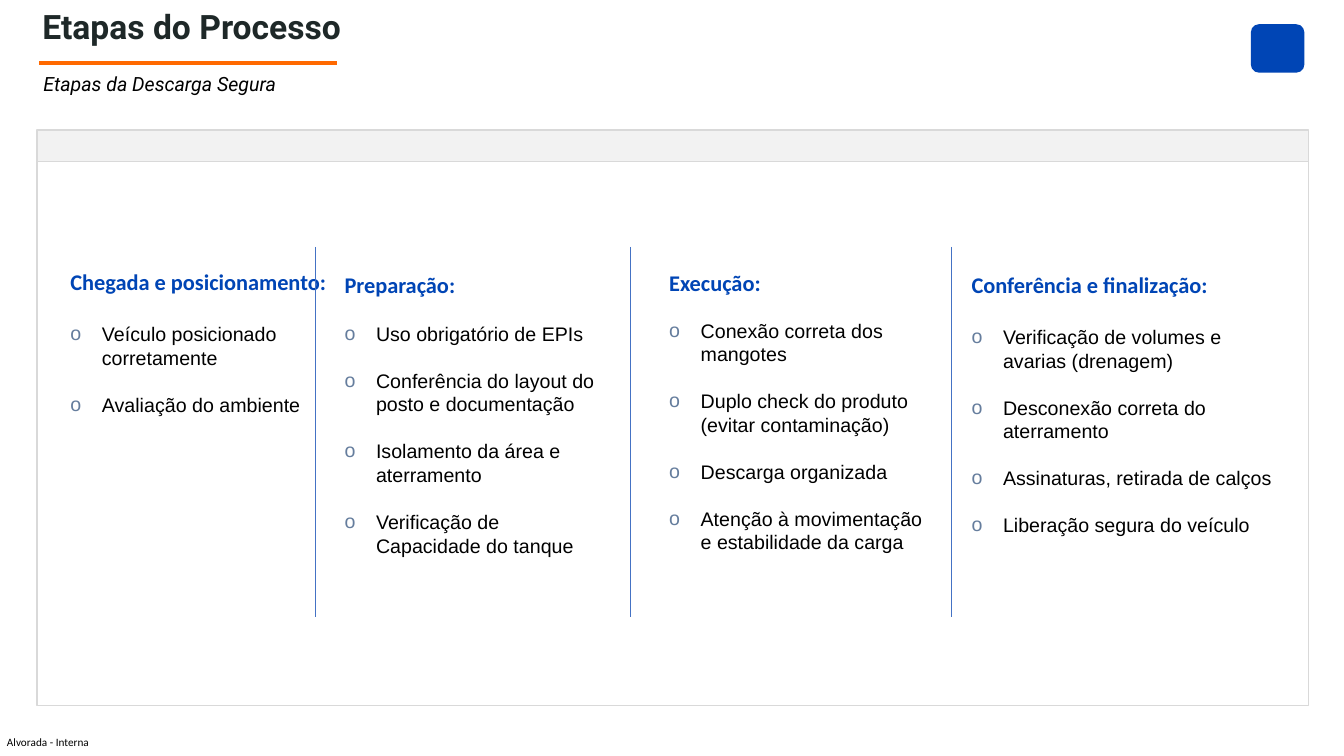
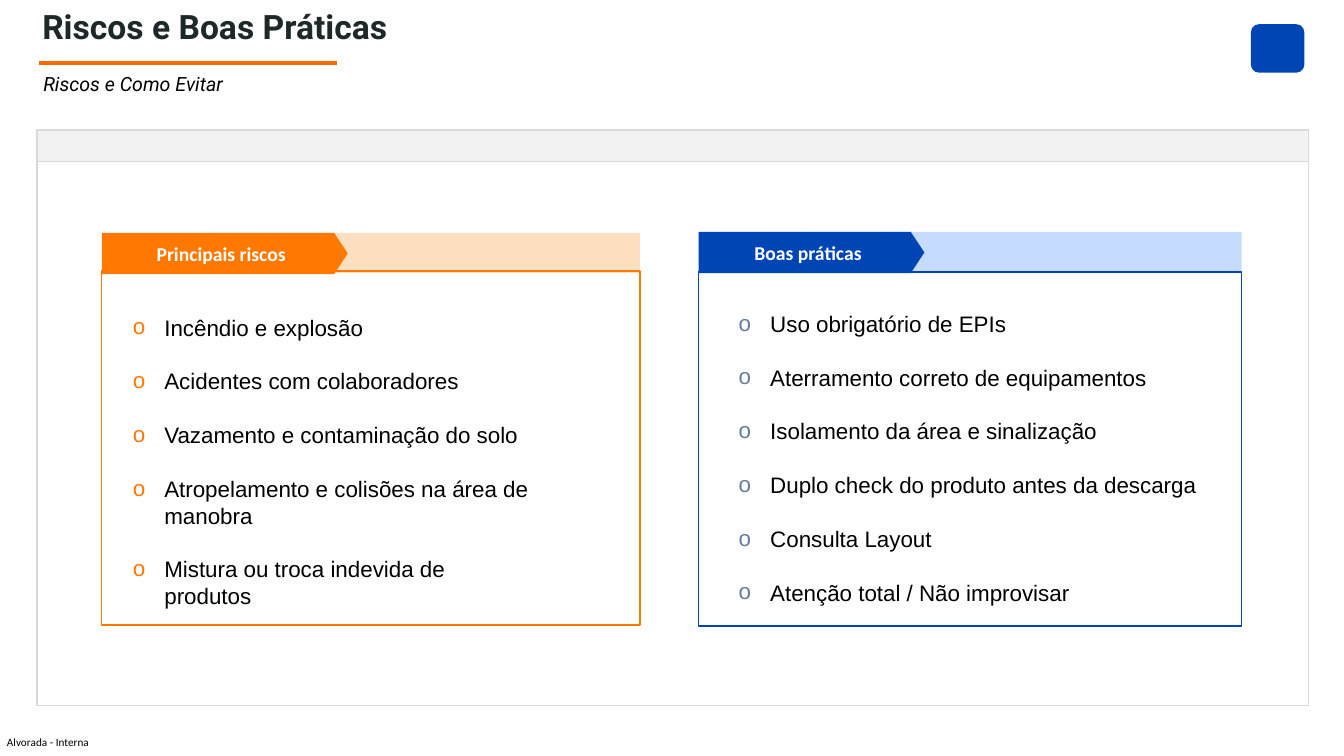
from dataclasses import dataclass

from lxml import etree
from pptx import Presentation
from pptx.dml.color import RGBColor
from pptx.enum.shapes import MSO_CONNECTOR as Connector, MSO_SHAPE as Preset
from pptx.enum.text import MSO_ANCHOR as Anchor, MSO_AUTO_SIZE as AutoSize, PP_ALIGN as Align
from pptx.oxml.ns import qn
from pptx.util import Pt


@dataclass(frozen=True)
class Theme:
    # Colours
    ink: str = "1E2828"
    black: str = "000000"
    white: str = "FFFFFF"
    blue: str = "0045B5"
    pale_blue: str = "C5DBFF"
    orange: str = "FF7800"
    pale_orange: str = "FFDFC1"
    rule: str = "FF6900"
    divider: str = "4472C4"
    bullet: str = "657D9D"
    band: str = "F2F2F2"
    border: str = "D9D9D9"
    # Fonts
    display: str = "Roboto"
    label: str = "Calibri"
    body: str = "Arial"
    # Type sizes
    title_size: float = 24
    large_size: float = 16
    text_size: float = 14
    footer_size: float = 8
    # List layout
    indent: float = 22.5
    line_factor: float = 1.2


THEME = Theme()
FOOTER = "Alvorada - Interna"

# Heading, left, top, width, gap under the heading, items
STAGES = [
    ("Chegada e posicionamento:", 43.2, 188, 203.5, 19.5,
     ["Veículo posicionado corretamente", "Avaliação do ambiente"]),
    ("Preparação:", 239, 190, 203.5, 17,
     ["Uso obrigatório de EPIs", "Conferência do layout do posto e documentação",
      "Isolamento da área e aterramento", "Verificação de Capacidade do tanque"]),
    ("Execução:", 470.9, 188.8, 203.5, 16,
     ["Conexão correta dos mangotes", "Duplo check do produto (evitar contaminação)",
      "Descarga organizada", "Atenção à movimentação e estabilidade da carga"]),
    ("Conferência e finalização:", 686.9, 190, 235.5, 19.5,
     ["Verificação de volumes e avarias (drenagem)", "Desconexão correta do aterramento",
      "Assinaturas, retirada de calços", "Liberação segura do veículo"]),
]
RISKS = ["Incêndio e explosão", "Acidentes com colaboradores",
         "Vazamento e contaminação do solo",
         "Atropelamento e colisões na área de manobra",
         "Mistura ou troca indevida de produtos"]
PRACTICES = ["Uso obrigatório de EPIs", "Aterramento correto de equipamentos",
             "Isolamento da área e sinalização",
             "Duplo check do produto antes da descarga",
             "Consulta Layout", "Atenção total / Não improvisar"]


def rgb(color):
    return RGBColor.from_string(color)


def format_runs(paragraph, font_name, size, color, bold=False, italic=False):
    for run in paragraph.runs:
        font = run.font
        font.name, font.size = font_name, Pt(size)
        font.bold, font.italic = bold, italic
        font.color.rgb = rgb(color)


def set_margins(text_frame, horizontal, vertical):
    text_frame.margin_left = text_frame.margin_right = Pt(horizontal)
    text_frame.margin_top = text_frame.margin_bottom = Pt(vertical)


def add_text_box(slide, left, top, width, height, inset=True):
    box = slide.shapes.add_textbox(Pt(left), Pt(top), Pt(width), Pt(height))
    text_frame = box.text_frame
    text_frame.word_wrap = True
    set_margins(text_frame, 7.2 if inset else 0, 3.6 if inset else 0)
    return text_frame


def add_box(slide, preset, left, top, width, height, fill=None, line=None):
    shape = slide.shapes.add_shape(preset, Pt(left), Pt(top), Pt(width), Pt(height))
    shape.shadow.inherit = False
    if fill:
        shape.fill.solid()
        shape.fill.fore_color.rgb = rgb(fill)
    else:
        shape.fill.background()
    if line:
        shape.line.color.rgb = rgb(line)
        shape.line.width = Pt(1)
    else:
        shape.line.fill.background()
    return shape


def add_line(slide, start, end, color, weight):
    points = [Pt(value) for value in (*start, *end)]
    line = slide.shapes.add_connector(Connector.STRAIGHT, *points)
    line.line.color.rgb = rgb(color)
    line.line.width = Pt(weight)
    etree.SubElement(line._element.spPr, qn("a:effectLst"))


def set_bullet(paragraph, color):
    properties = paragraph._p.get_or_add_pPr()
    properties.set("marL", str(Pt(THEME.indent)))
    properties.set("indent", str(-Pt(THEME.indent)))
    bullet_color = etree.SubElement(properties, qn("a:buClr"))
    etree.SubElement(bullet_color, qn("a:srgbClr"), val=color)
    etree.SubElement(properties, qn("a:buFont"), typeface=THEME.body)
    etree.SubElement(properties, qn("a:buChar"), char="o")


def add_bullets(text_frame, items, size, color, heading_gap=None):
    """Fill the list; with a heading gap, the first paragraph is already taken."""
    line_height = size * THEME.line_factor
    for index, item in enumerate(items):
        first = index == 0
        if first and heading_gap is None:
            paragraph = text_frame.paragraphs[0]
        else:
            paragraph = text_frame.add_paragraph()
            paragraph.space_before = Pt(heading_gap if first else line_height)
        paragraph.text = item
        set_bullet(paragraph, color)
        paragraph.line_spacing = Pt(line_height)
        format_runs(paragraph, THEME.body, size, THEME.black)


def add_base_slide(presentation, title, subtitle):
    slide = presentation.slides.add_slide(presentation.slide_layouts[5])

    # Footer and corner mark
    footer = add_text_box(slide, 5, 525.6, 90, 9.4, inset=False)
    footer.text = FOOTER
    format_runs(footer.paragraphs[0], THEME.label, THEME.footer_size, THEME.black)
    add_box(slide, Preset.ROUNDED_RECTANGLE, 893.5, 17.3, 38.2, 34.6, THEME.blue)

    # Title, rule and subtitle
    heading = slide.shapes.title
    heading.left, heading.top = Pt(30.2), Pt(4.3)
    heading.width, heading.height = Pt(802.8), Pt(51.8)
    text_frame = heading.text_frame
    text_frame.text = title
    text_frame.auto_size = AutoSize.NONE
    text_frame.vertical_anchor = Anchor.TOP
    set_margins(text_frame, 0, 0)
    paragraph = text_frame.paragraphs[0]
    paragraph.alignment = Align.LEFT
    paragraph.space_before = Pt(0)
    format_runs(paragraph, THEME.display, THEME.title_size, THEME.ink, bold=True)
    add_line(slide, (28, 45.2), (240.5, 45.2), THEME.rule, 3)
    subtitle_frame = add_text_box(slide, 23.8, 48.2, 838, 24.5)
    subtitle_frame.text = subtitle
    format_runs(subtitle_frame.paragraphs[0], THEME.display, THEME.text_size,
                THEME.black, italic=True)

    # Content panel
    add_box(slide, Preset.RECTANGLE, 26.6, 92.9, 908, 22.3, THEME.band, THEME.border)
    add_box(slide, Preset.RECTANGLE, 26.6, 115.2, 908, 388.8, line=THEME.border)
    return slide


def add_stage(slide, heading, left, top, width, gap, items):
    text_frame = add_text_box(slide, left, top, width, 210)
    text_frame.text = heading
    format_runs(text_frame.paragraphs[0], THEME.label, THEME.large_size,
                THEME.blue, bold=True)
    add_bullets(text_frame, items, THEME.text_size, THEME.bullet, gap)


def add_card(slide, label, left, top, width, tag_width, frame_top, color, pale):
    strip_offset = 81.2
    add_box(slide, Preset.RECTANGLE, left + strip_offset, top,
            width - strip_offset, 28.8, pale)
    tag = add_box(slide, Preset.PENTAGON, left, top, tag_width, 29.5, color)
    tag.adjustments[0] = 0.33
    text_frame = tag.text_frame
    text_frame.text = label
    text_frame.vertical_anchor = Anchor.MIDDLE
    set_margins(text_frame, 0, 0)
    text_frame.paragraphs[0].alignment = Align.CENTER
    format_runs(text_frame.paragraphs[0], THEME.label, THEME.text_size,
                THEME.white, bold=True)
    add_box(slide, Preset.RECTANGLE, left, frame_top, width, 252.7, line=color)


def build_stages(presentation):
    slide = add_base_slide(presentation, "Etapas do Processo", "Etapas da Descarga Segura")
    for stage in STAGES:
        add_stage(slide, *stage)
    for x in (225.4, 450, 679.7):
        add_line(slide, (x, 176.4), (x, 440.6), THEME.divider, 0.5)


def build_risks(presentation):
    slide = add_base_slide(presentation, "Riscos e Boas Práticas", "Riscos e Como Evitar")
    # Lists
    risks = add_text_box(slide, 87.8, 220.6, 300, 201)
    add_bullets(risks, RISKS, THEME.large_size, THEME.orange)
    practices = add_text_box(slide, 520.6, 217.9, 355, 220)
    add_bullets(practices, PRACTICES, THEME.large_size, THEME.bullet)
    # Cards around them
    add_card(slide, "Principais riscos", 72.7, 166.3, 384.5, 175.7, 193.7,
             THEME.orange, THEME.pale_orange)
    add_card(slide, "Boas práticas", 499, 165.6, 388, 161.3, 194.4,
             THEME.blue, THEME.pale_blue)


def main():
    presentation = Presentation()
    presentation.slide_width, presentation.slide_height = Pt(960), Pt(540)
    build_stages(presentation)
    build_risks(presentation)
    presentation.save("out.pptx")


if __name__ == "__main__":
    main()
